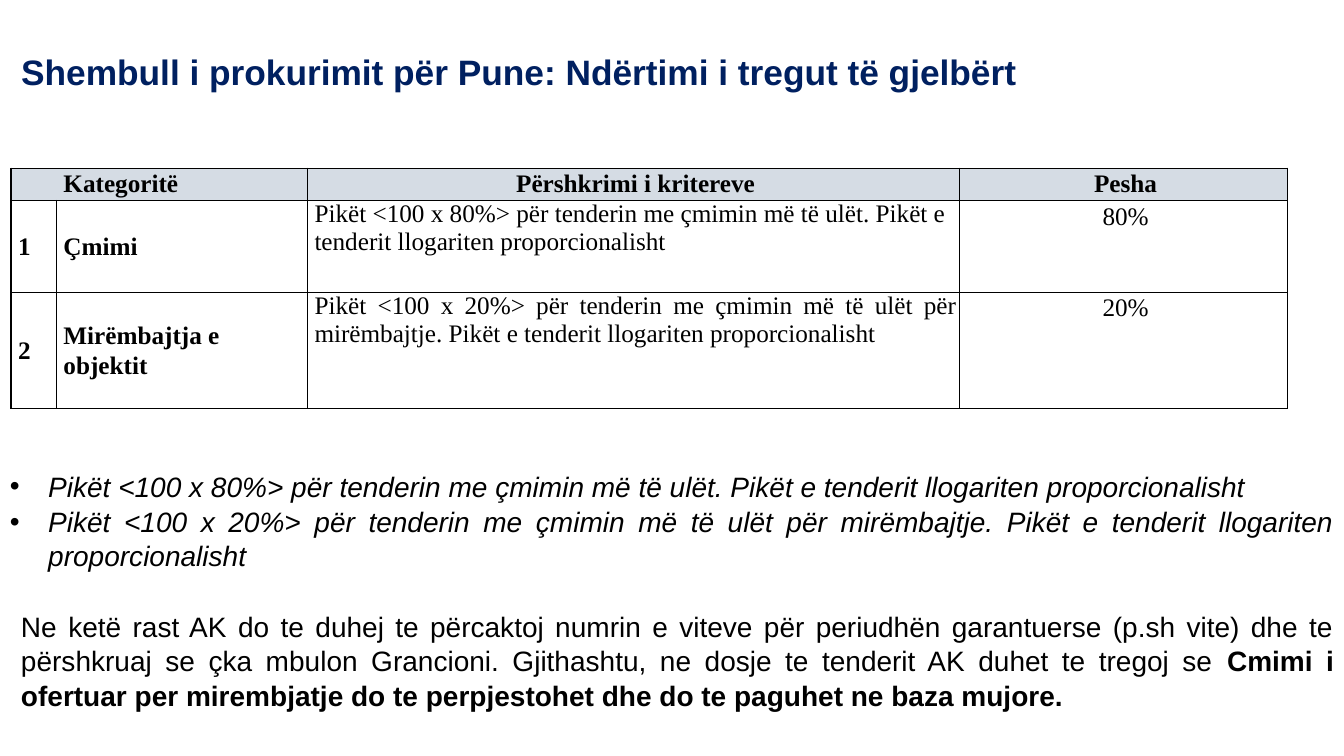
import pptx
import pptx.util
import pptx.dml.color
import pptx.enum.text
import pptx.oxml
import pptx.oxml.ns

Inches = pptx.util.Inches
Pt = pptx.util.Pt
ALIGN = pptx.enum.text.PP_ALIGN
ANCHOR = pptx.enum.text.MSO_ANCHOR
COLORS = {"title": "002060", "text": "000000", "head": "D5DCE4", "body": "FFFFFF"}
PRICE = ("Pikët <100 x 80%> për tenderin me çmimin më të ulët. "
         "Pikët e tenderit llogariten proporcionalisht")
UPKEEP = ("Pikët <100 x 20%> për tenderin me çmimin më të ulët për mirëmbajtje. "
          "Pikët e tenderit llogariten proporcionalisht")
TERMS = ("Ne ketë rast AK do te duhej te përcaktoj numrin e viteve për periudhën "
         "garantuerse (p.sh vite) dhe te përshkruaj se çka mbulon Grancioni. "
         "Gjithashtu, ne dosje te tenderit AK duhet te tregoj se ")
PAY = "Cmimi i ofertuar per mirembjatje do te perpjestohet dhe do te paguhet ne baza mujore."


class Deck:
    """Holds the style and the current slide, and adds each kind of element."""

    def __init__(self):
        self.show = pptx.Presentation()
        self.show.slide_width = Inches(13.33)
        self.show.slide_height = Inches(7.5)
        self.slide = self.show.slides.add_slide(self.show.slide_layouts[5])
        self.sans = {"name": "Arial", "size": Pt(20), "bold": False, "italic": False}
        self.serif = {**self.sans, "name": "Times New Roman", "size": Pt(18)}

    def apply(self, item, values):
        for name, value in values.items():
            setattr(item, name, value)

    def color(self, name):
        return pptx.dml.color.RGBColor.from_string(COLORS[name])

    def fill(self, para, runs, font, form, color="text"):
        self.apply(para, form)
        for text, extra in runs:
            run = para.add_run()
            run.text = text
            self.apply(run.font, {**font, **extra})
            run.font.color.rgb = self.color(color)

    def place(self, shape, left, top, width, height):
        self.apply(shape, {"left": Inches(left), "top": Inches(top),
                           "width": Inches(width), "height": Inches(height)})

    def title(self, text, box):
        shape = self.slide.shapes.title
        self.place(shape, *box)
        frame = shape.text_frame
        self.apply(frame, {"word_wrap": True, "vertical_anchor": ANCHOR.MIDDLE,
                           "auto_size": pptx.enum.text.MSO_AUTO_SIZE.NONE})
        self.fill(frame.paragraphs[0], [(text, {"size": Pt(25.2), "bold": True})],
                  self.sans, {"alignment": ALIGN.LEFT, "line_spacing": 0.9}, "title")

    def text(self, box, paras, spacing, bullet=False):
        frame = self.slide.shapes.add_textbox(*map(Inches, box)).text_frame
        frame.word_wrap = True
        for i, runs in enumerate(paras):
            para = frame.add_paragraph() if i else frame.paragraphs[0]
            self.fill(para, runs, self.sans, {"alignment": ALIGN.JUSTIFY,
                      "line_spacing": spacing, "space_after": Pt(0.8)})
            if bullet:
                self.bullet(para)

    def bullet(self, para):
        props = para._p.get_or_add_pPr()
        props.set("marL", str(Inches(0.38)))
        props.set("indent", str(-Inches(0.38)))
        space = pptx.oxml.ns.nsdecls("a")
        for xml in ('<a:buFont %s typeface="Arial"/>', '<a:buChar %s char="•"/>'):
            props.append(pptx.oxml.parse_xml(xml % space))

    def border(self, cell, sides):
        props = cell._tc.get_or_add_tcPr()
        for i, side in enumerate("LRTB"):
            fill = ('<a:solidFill><a:srgbClr val="%s"/></a:solidFill>' % COLORS["text"]
                    if side in sides else "<a:noFill/>")
            props.insert(i, pptx.oxml.parse_xml('<a:ln%s %s w="%d">%s</a:ln%s>' % (
                side, pptx.oxml.ns.nsdecls("a"), Pt(1), fill, side)))

    def cell(self, cell, text, row, col):
        head = row == 0
        label = not head and col < 2
        self.apply(cell, {"margin_left": Inches(0.07), "margin_right": Inches(0.03),
                          "margin_top": 0, "margin_bottom": 0,
                          "vertical_anchor": ANCHOR.MIDDLE if label else ANCHOR.TOP})
        cell.fill.solid()
        cell.fill.fore_color.rgb = self.color("head" if head else "body")
        self.border(cell, {(0, 0): "LTB", (0, 1): "RTB"}.get((row, col), "LRTB"))
        align = ALIGN.LEFT
        if col == 3 or (head and col == 2):
            align = ALIGN.CENTER
        elif (row, col) == (2, 2):
            align = ALIGN.JUSTIFY
        spacing = 0.99 if col == 2 and not head else 1.07
        self.fill(cell.text_frame.paragraphs[0], [(text, {"bold": head or label})],
                  self.serif, {"alignment": align, "line_spacing": spacing})

    def table(self, box, widths, heights, rows):
        grid = self.slide.shapes.add_table(
            len(heights), len(widths), *map(Inches, box)).table
        self.apply(grid, {"first_row": False, "horz_banding": False})
        for col, width in zip(grid.columns, widths):
            col.width = Inches(width)
        for row, height in zip(grid.rows, heights):
            row.height = Inches(height)
        for r, texts in enumerate(rows):
            for c, text in enumerate(texts):
                self.cell(grid.cell(r, c), text, r, c)


def main():
    deck = Deck()
    deck.title("Shembull i prokurimit për Pune: Ndërtimi i tregut të gjelbërt",
               (0.11, 0.38, 12.99, 0.72))
    deck.table((0.11, 1.67, 12.66, 2.38), (0.45, 2.49, 6.47, 3.25), (0.32, 0.91, 1.15), [
        ("", "Kategoritë", "Përshkrimi i kritereve", "Pesha"),
        ("1", "Çmimi", PRICE, "80%"),
        ("2", "Mirëmbajtja e objektit", UPKEEP, "20%")])
    deck.text((0, 4.6, 13.33, 1.14), [[(text, {"italic": True})] for text in (PRICE, UPKEEP)],
              1.02, bullet=True)
    deck.text((0.11, 5.98, 13.22, 1.13), [[(TERMS, {}), (PAY, {"bold": True})]], 1.04)
    deck.show.save("out.pptx")


if __name__ == "__main__":
    main()
